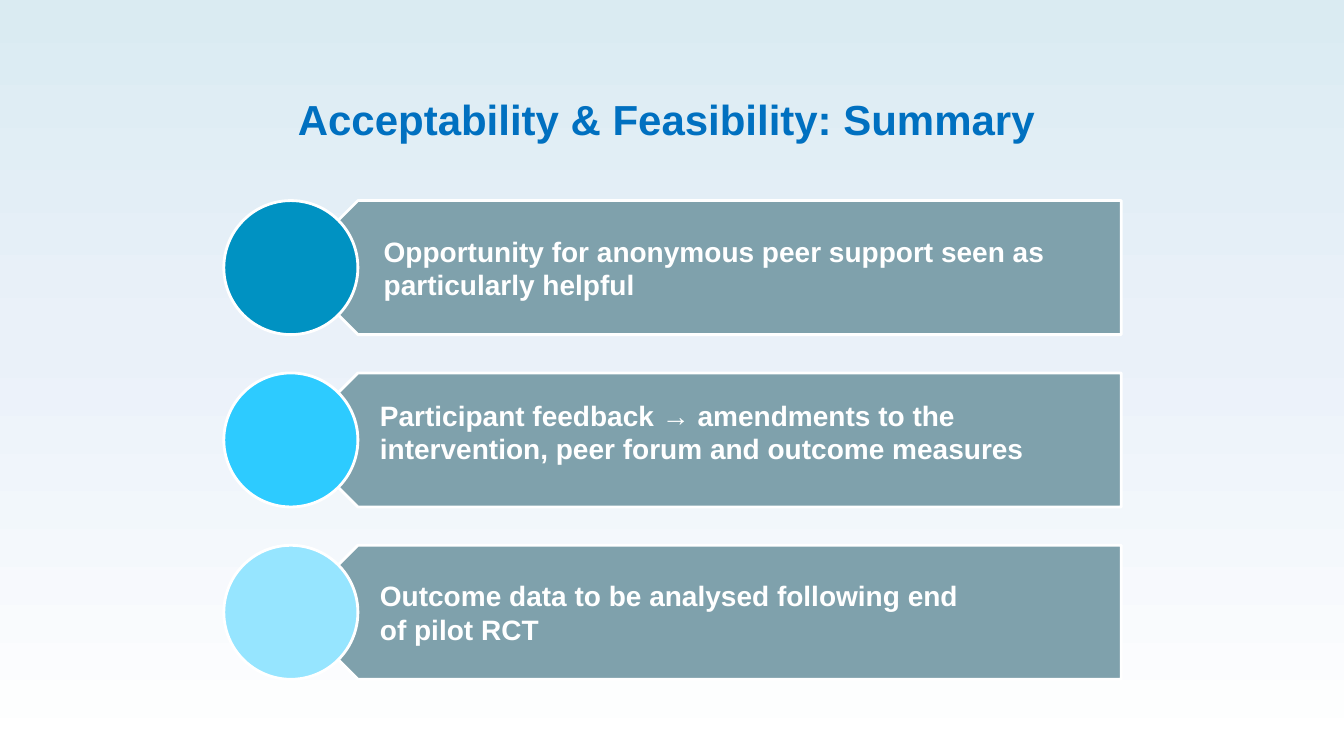
from copy import deepcopy
from pptx import Presentation
from pptx.dml.color import RGBColor
from pptx.enum.shapes import MSO_SHAPE as Kind
from pptx.enum.text import MSO_ANCHOR as Anchor, PP_ALIGN as Align
from pptx.oxml.ns import qn
from pptx.util import Inches, Pt

TITLE = "Acceptability & Feasibility: Summary"
FIRST = ["Opportunity for anonymous peer support seen as particularly helpful"]
NOTES = [
    ((3.67, 3.9, 6.67, 0.77), True,
     ["Participant feedback → amendments to the intervention, "
      "peer forum and outcome measures"]),
    ((3.67, 5.69, 6.06, 0.77), False,
     ["Outcome data to be analysed following end", "of pilot RCT"]),
]
DISCS = ["0092C2", "2DCBFF", "96E5FF"]
SKY = [(0, "DAEBF2"), (0.45, "EAF1F9"), (1, "FFFFFF")]
TOP, STEP, SIZE = 1.99, 1.71, 1.33
LEFT, RIGHT = 2.22, 11.12


def tint(code):
    return RGBColor.from_string(code)


def write(frame, lines, size=20, color="FFFFFF", align=Align.LEFT,
          anchor=Anchor.TOP, wrap=True):
    frame.word_wrap = wrap
    frame.vertical_anchor = anchor
    for i, line in enumerate(lines):
        para = frame.add_paragraph() if i else frame.paragraphs[0]
        para.alignment = align
        run = para.add_run()
        run.text = line
        font = run.font
        font.name, font.size, font.bold = "Arial", Pt(size), True
        font.color.rgb = tint(color)


def paint(shape, color):
    shape.shadow.inherit = False
    shape.fill.solid()
    shape.fill.fore_color.rgb = tint(color)
    shape.line.color.rgb = tint("FFFFFF")
    shape.line.width = Pt(2)


def add_sky(slide):
    fill = slide.background.fill
    fill.gradient()
    fill.gradient_angle = 270
    stops = slide.element.find(".//" + qn("a:gsLst"))
    stops.append(deepcopy(stops[-1]))
    for stop, (place, color) in zip(fill.gradient_stops, SKY):
        stop.position = place
        stop.color.rgb = tint(color)


def add_bar(shapes, top):
    tip, neck = LEFT + SIZE / 2, LEFT + SIZE
    low = top + SIZE
    points = [(RIGHT, low), (neck, low), (tip, top + SIZE / 2),
              (neck, top), (RIGHT, top)]
    spots = [(Inches(x), Inches(y)) for x, y in points]
    path = shapes.build_freeform(*spots[0])
    path.add_line_segments(spots[1:], close=True)
    bar = path.convert_to_shape()
    paint(bar, "7FA1AC")
    return bar


def main():
    """Build the summary slide and save it."""
    deck = Presentation()
    deck.slide_width, deck.slide_height = Inches(13.33), Inches(7.5)
    slide = deck.slides.add_slide(deck.slide_layouts[6])
    shapes = slide.shapes
    add_sky(slide)

    bars = []
    for i, color in enumerate(DISCS):
        top = TOP + i * STEP
        bars.append(add_bar(shapes, top))
        disc = shapes.add_shape(Kind.OVAL, Inches(LEFT), Inches(top),
                                Inches(SIZE), Inches(SIZE))
        paint(disc, color)

    frame = bars[0].text_frame
    frame.margin_left, frame.margin_right = Inches(0.92), Inches(0.16)
    frame.margin_top = frame.margin_bottom = Inches(0.08)
    write(frame, FIRST, anchor=Anchor.MIDDLE)

    head = shapes.add_textbox(*map(Inches, (0.48, 0.88, 12.38, 0.61)))
    write(head.text_frame, [TITLE + " "], size=30, color="0070C0",
          align=Align.CENTER)
    for place, wrap, lines in NOTES:
        note = shapes.add_textbox(*map(Inches, place))
        write(note.text_frame, lines, wrap=wrap)

    deck.save("out.pptx")


if __name__ == "__main__":
    main()
